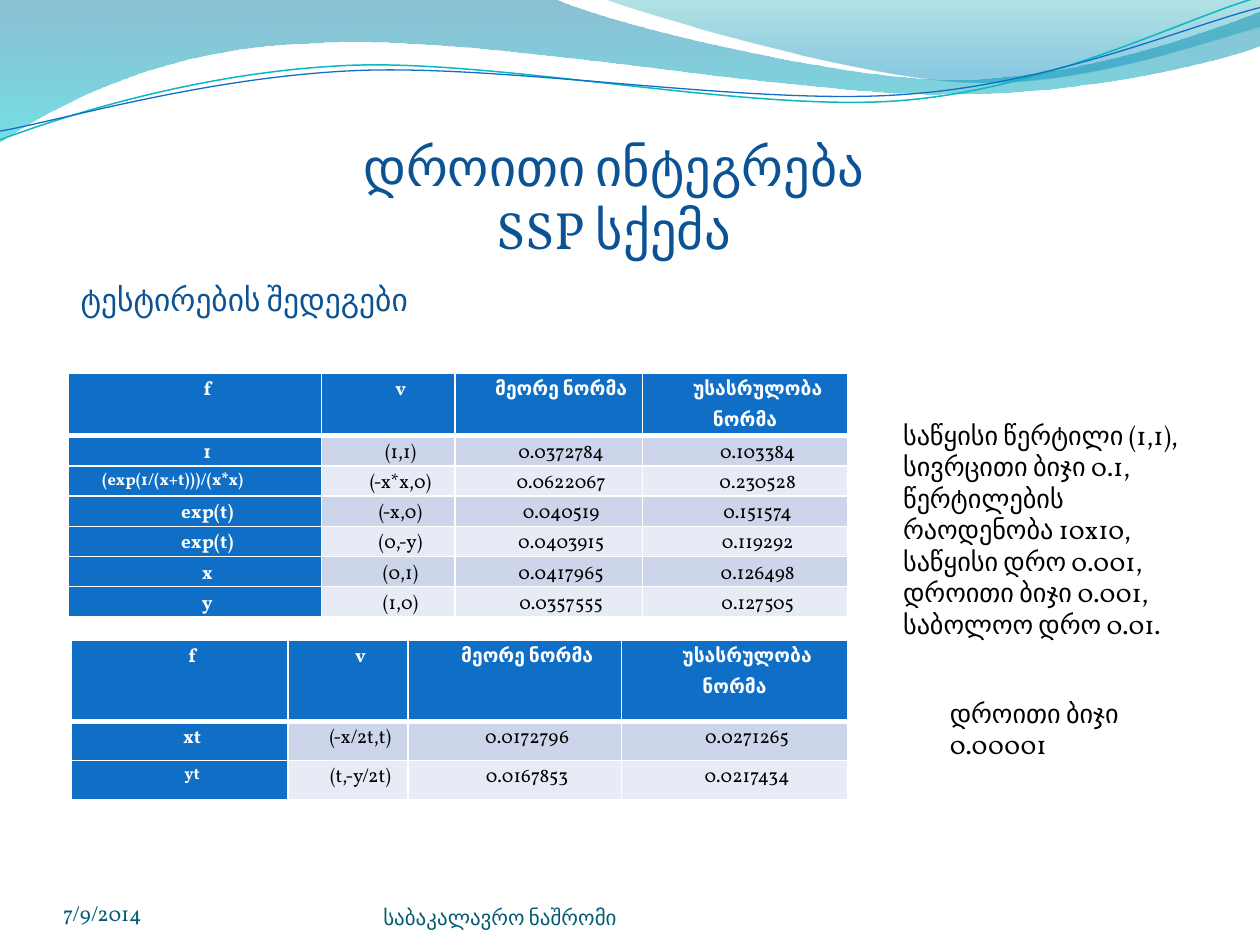
"""Build the slide on time integration with the SSP scheme test results."""
from lxml import etree
from pptx import Presentation
from pptx.dml.color import RGBColor
from pptx.enum.text import MSO_ANCHOR, PP_ALIGN
from pptx.oxml.ns import qn
from pptx.util import Pt

CENTER, LEFT = PP_ALIGN.CENTER, PP_ALIGN.LEFT
TOP, BOTTOM = MSO_ANCHOR.TOP, MSO_ANCHOR.BOTTOM
FONT = "Vollkorn"
COLORS = {
    "heading": "0B5394", "footer": "045D75", "text": "000000", "white": "FFFFFF",
    "blue": "0F6FC6", "band_dark": "CCD5EA", "band_light": "E7EBF5",
    "wave_blue": "0074A1", "wave_cyan": "00C6CF", "crest_teal": "00A1A9",
    "crest_blue": "008BBF", "line_teal": "0AB8BF",
}

WAVE = [
    [(0, 0)], [(316.8, -0.7)],
    [(342.7, 12.2), (478.1, 45.4), (545.8, 45.4)],
    [(614.2, 45.4), (689.8, 18.7), (720, 6.5)],
    [(720.7, 25.9)],
    [(707.8, 31.7), (626.4, 54.7), (537.1, 54)],
    [(447.8, 54), (275, 20.2), (185, 24.5)],
    [(92.9, 25.9), (33.1, 59.8), (-0.7, 81.4)],
    [(0, 0)],
]
CREST = [
    [(344.9, -0.7)],
    [(366.5, 7.9), (491, 44.6), (553.7, 46.8)],
    [(616.3, 49.7), (691.9, 23), (720, 15.1)],
    [(720, 0)], [(344.9, -0.7)],
]
TEAL_LINE = [
    [(0, 79.9)],
    [(34.6, 67), (113.8, 41), (199.4, 37.4)],
    [(284.4, 33.8), (427, 64.1), (513.4, 57.6)],
    [(599.8, 51.1), (675.4, 10.8), (718.6, -1.4)],
]
BLUE_LINE = [
    [(0, 74.9)],
    [(33.8, 69.1), (118.1, 43.9), (203.8, 40.3)],
    [(290.2, 36.7), (429.8, 60.5), (516.2, 54)],
    [(601.9, 48.2), (677.5, 15.1), (720, 4.3)],
]

HEADER = ["f", "v", "მეორე ნორმა", "უსასრულობა ნორმა"]
MAIN_RESULTS = [
    ["1", "(1,1)", "0.0372784", "0.103384"],
    ["(exp(1/(x+t)))/(x*x)", "(-x*x,0)", "0.0622067", "0.230528"],
    ["exp(t)", "(-x,0)", "0.040519", "0.151574"],
    ["exp(t)", "(0,-y)", "0.0403915", "0.119292"],
    ["x", "(0,1)", "0.0417965", "0.126498"],
    ["y", "(1,0)", "0.0357555", "0.127505"],
]
SMALL_STEP_RESULTS = [
    ["xt", "(-x/2t,t)", "0.0172796", "0.0271265"],
    ["yt", "(t,-y/2t)", "0.0167853", "0.0217434"],
]
SMALL_LABELS = {"(exp(1/(x+t)))/(x*x)": LEFT, "yt": CENTER}


def color(name):
    """Return the named colour."""
    return RGBColor.from_string(COLORS[name])


def format_text(frame, size, color_name, align=LEFT, bold=False):
    """Format every paragraph and run of a text frame."""
    for para in frame.paragraphs:
        para.alignment = align
        for span in para.runs:
            span.font.name = FONT
            span.font.size = Pt(size)
            span.font.bold = bold
            span.font.color.rgb = color(color_name)


def add_title(page, text, bounds):
    """Fill and format the title placeholder."""
    title = page.shapes.title
    title.left, title.top, title.width, title.height = map(Pt, bounds)
    title.text_frame.text = text
    title.text_frame.vertical_anchor = TOP
    format_text(title.text_frame, 30, "heading", CENTER)


def add_text(page, text, bounds, size, color_name, footer=False):
    """Add a wrapped text box, without insets and bottom-anchored for a footer."""
    frame = page.shapes.add_textbox(*map(Pt, bounds)).text_frame
    frame.word_wrap = True
    frame.text = text
    if footer:
        frame.vertical_anchor = BOTTOM
        frame.margin_left = frame.margin_right = 0
        frame.margin_top = frame.margin_bottom = 0
    format_text(frame, size, color_name)


def add_outline(page, segments, closed):
    """Add a freeform whose three-point segments are cubic curves."""
    points = [(Pt(x), Pt(y)) for segment in segments for x, y in segment]
    builder = page.shapes.build_freeform(*points[0], scale=1.0)
    builder.add_line_segments(points[1:], close=closed)
    shape = builder.convert_to_shape()
    shape.shadow.inherit = False
    steps = iter(list(shape._element.iter(qn("a:lnTo"))))
    for segment in segments[1:]:
        lines = [next(steps) for _ in segment]
        if len(lines) == 3:
            curve = etree.Element(qn("a:cubicBezTo"))
            lines[0].addprevious(curve)
            for line in lines:
                curve.append(line[0])
                line.getparent().remove(line)
    return shape


def add_wave(page, segments, stops):
    """Add a closed wave with a translucent gradient running downwards."""
    shape = add_outline(page, segments, True)
    shape.line.fill.background()
    shape.fill.gradient()
    shape.fill.gradient_angle = 270
    for stop, (position, name, _) in zip(shape.fill.gradient_stops, stops):
        stop.position = position
        stop.color.rgb = color(name)
    shades = shape._element.spPr.iter(qn("a:srgbClr"))
    for shade, (_, _, opacity) in zip(shades, stops):
        etree.SubElement(shade, qn("a:alpha"), val=str(opacity * 1000))


def add_curve(page, segments, color_name, width):
    """Add an open curved line."""
    shape = add_outline(page, segments, False)
    shape.fill.background()
    shape.line.color.rgb = color(color_name)
    shape.line.width = Pt(width)


def set_borders(cell, top, bottom):
    """Draw white borders around a cell."""
    properties = cell._tc.get_or_add_tcPr()
    for index, (side, width) in enumerate(
            [("L", 1), ("R", 1), ("T", top), ("B", bottom)]):
        line = etree.Element(qn(f"a:ln{side}"), w=str(Pt(width)))
        fill = etree.SubElement(line, qn("a:solidFill"))
        etree.SubElement(fill, qn("a:srgbClr"), val=COLORS["white"])
        properties.insert(index, line)


def fill_cell(cell, text, row, column):
    """Write and format one table cell according to its place."""
    label = row == 0 or column == 0
    band = "band_dark" if row % 2 else "band_light"
    cell.fill.solid()
    cell.fill.fore_color.rgb = color("blue" if label else band)
    set_borders(cell, 3 if row == 1 else 1, 3 if row == 0 else 1)
    cell.margin_left = cell.margin_right = Pt(5)
    cell.margin_top = cell.margin_bottom = 0
    cell.text_frame.text = text
    format_text(cell.text_frame, 9.5 if text in SMALL_LABELS else 11,
                "white" if label else "text", SMALL_LABELS.get(text, CENTER), label)
    para = cell.text_frame.paragraphs[0]
    para.line_spacing = 1.15
    properties = para._p.get_or_add_pPr()
    properties.set("marL", "0")
    properties.set("indent", str(Pt(14.4)))


def add_results(page, left, top, widths, header_height, row_height, results):
    """Add a table of norms below the shared header."""
    rows = [HEADER, *results]
    height = header_height + row_height * len(results)
    table = page.shapes.add_table(len(rows), len(HEADER), Pt(left), Pt(top),
                                  Pt(sum(widths)), Pt(height)).table
    for column, width in zip(table.columns, widths):
        column.width = Pt(width)
    for r, values in enumerate(rows):
        table.rows[r].height = Pt(row_height if r else header_height)
        for c, text in enumerate(values):
            fill_cell(table.cell(r, c), text, r, c)


def main():
    """Build and save the deck."""
    deck = Presentation()
    deck.slide_width, deck.slide_height = Pt(720), Pt(540)
    page = deck.slides.add_slide(deck.slide_layouts[5])
    add_wave(page, WAVE, [(0, "wave_blue", 45), (1, "wave_cyan", 55)])
    add_wave(page, CREST, [(0, "crest_teal", 30), (0.8, "crest_blue", 45)])
    add_curve(page, TEAL_LINE, "line_teal", 0.85)
    add_curve(page, BLUE_LINE, "blue", 0.75)
    add_title(page, "დროითი ინტეგრება\nSSP სქემა", (90.2, 73, 521.3, 80))
    add_text(page, "7/9/2014", (36, 500.4, 168, 28.8), 12, "footer", True)
    add_text(page, "საბაკალავრო ნაშრომი", (219, 502.5, 264, 28.8), 12, "footer", True)
    add_text(page, "ტესტირების შედეგები", (39, 156.2, 312, 29), 18, "heading")
    add_text(page, "საწყისი წერტილი (1,1), სივრცითი ბიჯი 0.1, წერტილების რაოდენობა 10x10, "
             "საწყისი დრო 0.001, დროითი ბიჯი 0.001, საბოლოო დრო 0.01.",
             (509, 236, 190, 116.6), 15, "text")
    add_text(page, "დროითი ბიჯი 0.00001", (535.7, 394.8, 136, 44), 15, "text")
    add_results(page, 39, 213.2, [144.6, 76.3, 107.2, 117.4], 35.8, 17.28, MAIN_RESULTS)
    add_results(page, 40.6, 365.7, [124, 68.5, 122, 129.4], 46.5, 22.3,
                SMALL_STEP_RESULTS)
    deck.save("out.pptx")


if __name__ == "__main__":
    main()
